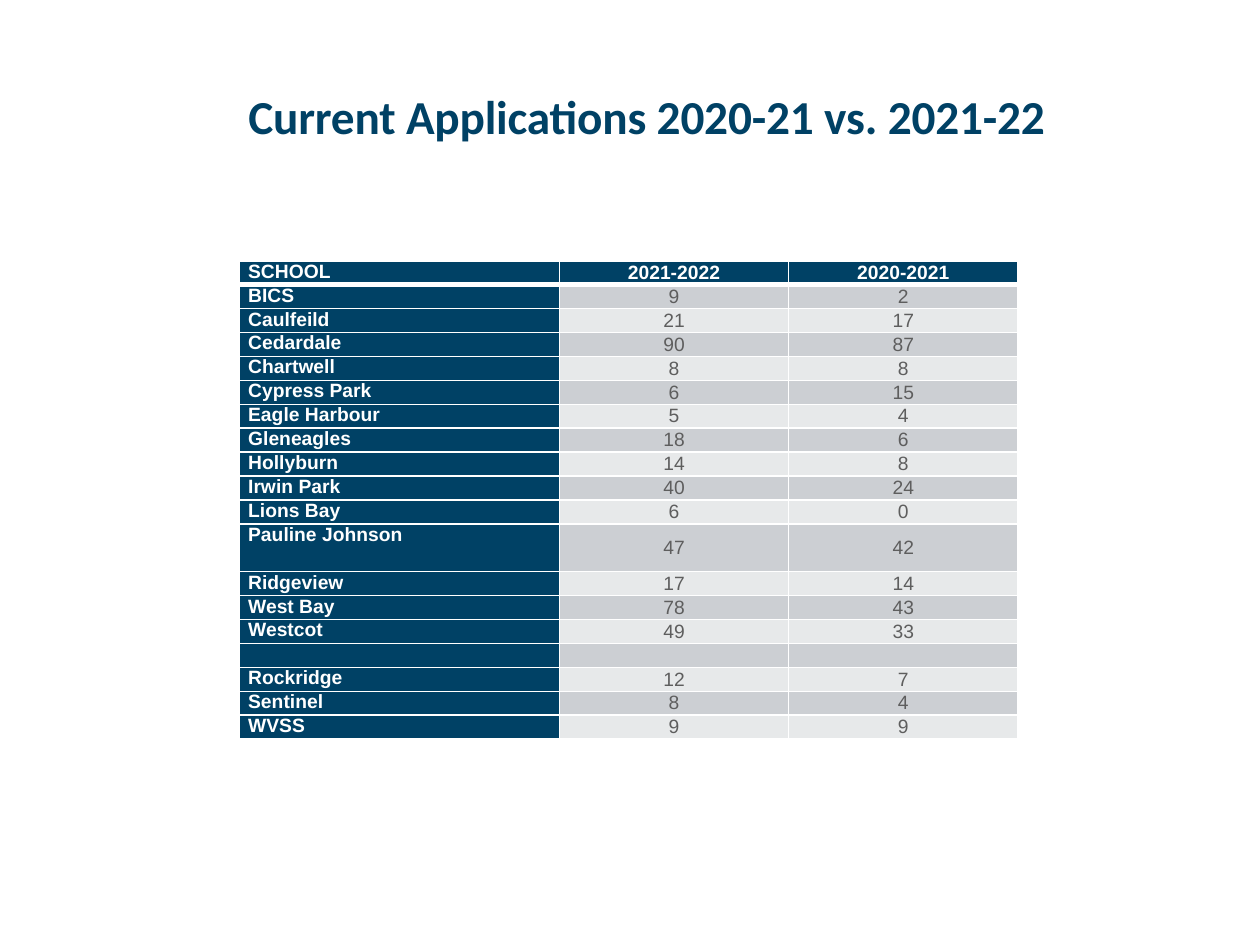
from lxml.etree import SubElement
from pptx import Presentation
from pptx.dml.color import RGBColor
from pptx.enum.text import MSO_ANCHOR as Anchor, PP_ALIGN as Align
from pptx.oxml.ns import qn
from pptx.util import Inches, Pt

NAVY, WHITE, GREY = "004165", "FFFFFF", "5E5E5E"
BANDS = ["E7E9EA", "CCCFD3"]
ROW = 0.19
COLUMNS = [2.54, 1.82, 1.82]

APPLICATIONS = [
    ("SCHOOL", "2021-2022", "2020-2021"),
    ("BICS", "9", "2"),
    ("Caulfeild", "21", "17"),
    ("Cedardale", "90", "87"),
    ("Chartwell", "8", "8"),
    ("Cypress Park", "6", "15"),
    ("Eagle Harbour", "5", "4"),
    ("Gleneagles", "18", "6"),
    ("Hollyburn", "14", "8"),
    ("Irwin Park", "40", "24"),
    ("Lions Bay", "6", "0"),
    ("Pauline Johnson", "47", "42"),
    ("Ridgeview", "17", "14"),
    ("West Bay", "78", "43"),
    ("Westcot", "49", "33"),
    ("", "", ""),
    ("Rockridge", "12", "7"),
    ("Sentinel", "8", "4"),
    ("WVSS", "9", "9"),
]


def add_run(paragraph, text, font, size, color, bold):
    run = paragraph.add_run()
    run.text = text
    run.font.name, run.font.size, run.font.bold = font, Pt(size), bold
    run.font.color.rgb = RGBColor.from_string(color)
    return run


def add_border(cell, side, points):
    line = SubElement(cell._tc.get_or_add_tcPr(), qn(f"a:ln{side}"), w=str(Pt(points)))
    fill = SubElement(line, qn("a:solidFill"))
    SubElement(fill, qn("a:srgbClr"), val=WHITE)


prs = Presentation()
prs.slide_width, prs.slide_height = Inches(10), Inches(7.5)
slide = prs.slides.add_slide(prs.slide_layouts[6])

# Title
title = slide.shapes.add_textbox(Inches(0.83), 0, Inches(8.6), Inches(1.15)).text_frame
title.word_wrap = True
title.vertical_anchor = Anchor.BOTTOM
title.margin_left = title.margin_top = title.margin_right = title.margin_bottom = 0
heading = title.paragraphs[0]
heading.alignment, heading.line_spacing = Align.CENTER, 0.9
heading_run = add_run(heading, "Current Applications 2020-21 vs. 2021-22", "Calibri", 27, NAVY, True)
heading_run.font._element.set("spc", "-10")

# Table grid
table = slide.shapes.add_table(
    len(APPLICATIONS), len(COLUMNS), Inches(1.9), Inches(2.07),
    Inches(sum(COLUMNS)), Inches(ROW * (len(APPLICATIONS) + 1))).table
table.first_col = True
for column, width in zip(table.columns, COLUMNS):
    column.width = Inches(width)

# Applications by school, one double-height row
for r, record in enumerate(APPLICATIONS):
    table.rows[r].height = Inches(ROW * (2 if record[0] == "Pauline Johnson" else 1))
    for c, value in enumerate(record):
        cell = table.cell(r, c)
        is_header = r == 0 or c == 0
        cell.margin_left = cell.margin_right = Inches(0.07)
        cell.margin_top = cell.margin_bottom = 0
        for side in "LRTB":
            thick = (r == 0 and side == "B") or (r == 1 and side == "T")
            add_border(cell, side, 3 if thick else 1)
        cell.fill.solid()
        cell.fill.fore_color.rgb = RGBColor.from_string(NAVY if is_header else BANDS[r % 2])
        entry = cell.text_frame.paragraphs[0]
        if c > 0:
            cell.vertical_anchor = Anchor.MIDDLE
            entry.alignment = Align.CENTER
        if value:
            add_run(entry, value, "Arial", 11, WHITE if is_header else GREY, is_header)
        else:
            SubElement(entry._p, qn("a:endParaRPr"), sz="1100")

prs.save("out.pptx")
